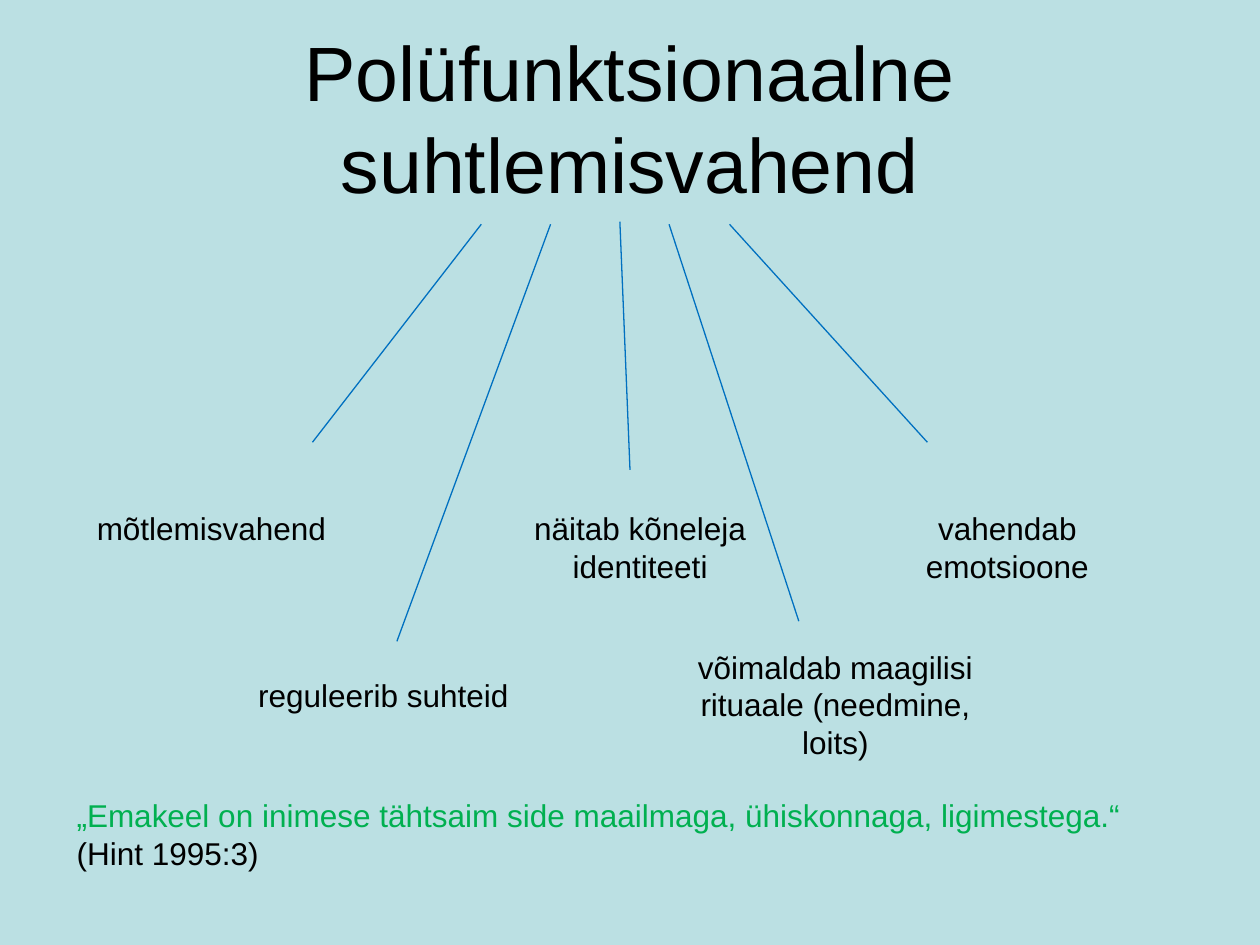
from dataclasses import dataclass

from lxml.etree import SubElement
from pptx import Presentation
from pptx.dml.color import RGBColor
from pptx.enum.shapes import MSO_CONNECTOR
from pptx.enum.text import MSO_ANCHOR, PP_ALIGN as Align
from pptx.oxml.ns import qn
from pptx.slide import Slide
from pptx.text.text import _Run as Run
from pptx.util import Inches, Pt

BACKGROUND = RGBColor(0xBB, 0xE0, 0xE3)
BLACK = RGBColor(0, 0, 0)
BLUE = RGBColor(0x00, 0x70, 0xC0)
GREEN = RGBColor(0x00, 0xB0, 0x50)
FONT = "Arial"
BODY_SIZE = 18


@dataclass
class Role:
    """One role of language: its label and the line leading to it."""
    text: str
    left: float
    top: float
    width: float
    height: float
    line_start: tuple[float, float]
    line_end: tuple[float, float]
    align: Align = Align.CENTER


ROLES = [
    Role("mõtlemisvahend", 0.67, 3.99, 2.24, 0.4, (3.82, 1.78), (2.48, 3.51), Align.LEFT),
    Role("reguleerib suhteid", 1.95, 5.32, 2.58, 0.4, (4.37, 1.78), (3.15, 5.09), Align.LEFT),
    Role("näitab kõneleja identiteeti", 3.82, 3.99, 2.52, 0.71, (4.92, 1.76), (5, 3.73)),
    Role("võimaldab maagilisi rituaale (needmine, loits)", 5.33, 5.09, 2.6, 1.01,
         (5.31, 1.78), (6.34, 4.93)),
    Role("vahendab emotsioone", 6.97, 3.99, 2.05, 0.71, (5.79, 1.78), (7.36, 3.51)),
]


def format_run(span: Run, size: float, color: RGBColor = BLACK) -> None:
    span.font.name = FONT
    span.font.size = Pt(size)
    span.font.color.rgb = color


def add_text(page: Slide, left: float, top: float, width: float, height: float,
             parts: list[tuple[str, RGBColor]], align: Align = Align.LEFT) -> None:
    box = page.shapes.add_textbox(Inches(left), Inches(top), Inches(width), Inches(height))
    box.text_frame.word_wrap = True
    para = box.text_frame.paragraphs[0]
    para.alignment = align
    for text, color in parts:
        span = para.add_run()
        span.text = text
        format_run(span, BODY_SIZE, color)


def add_line(page: Slide, start: tuple[float, float], end: tuple[float, float]) -> None:
    points = [Inches(value) for value in (*start, *end)]
    line = page.shapes.add_connector(MSO_CONNECTOR.STRAIGHT, *points)
    line.line.color.rgb = BLUE
    line.line.width = Pt(0.75)
    SubElement(line._element.spPr, qn("a:effectLst"))


def add_title(page: Slide, text: str) -> None:
    title = page.shapes.title
    title.left, title.top = Inches(0.5), Inches(0.3)
    title.width, title.height = Inches(9), Inches(1.25)
    frame = title.text_frame
    frame.text = text
    frame.word_wrap = True
    frame.vertical_anchor = MSO_ANCHOR.MIDDLE
    para = frame.paragraphs[0]
    para.alignment = Align.CENTER
    format_run(para.runs[0], 44)


def main() -> None:
    deck = Presentation()
    deck.slide_width, deck.slide_height = Inches(10), Inches(7.5)
    page = deck.slides.add_slide(deck.slide_layouts[5])
    page.background.fill.solid()
    page.background.fill.fore_color.rgb = BACKGROUND

    add_title(page, "Polüfunktsionaalne suhtlemisvahend")

    # Roles fanning out from the title
    for role in ROLES:
        add_line(page, role.line_start, role.line_end)
        add_text(page, role.left, role.top, role.width, role.height,
                 [(role.text, BLACK)], role.align)

    # Closing quotation with its reference
    add_text(page, 0.51, 6.27, 8.9, 0.71, [
        ("„Emakeel on inimese tähtsaim side maailmaga, ühiskonnaga, ligimestega.“ ", GREEN),
        ("(Hint 1995:3)", BLACK),
    ])

    deck.save("out.pptx")


if __name__ == "__main__":
    main()
